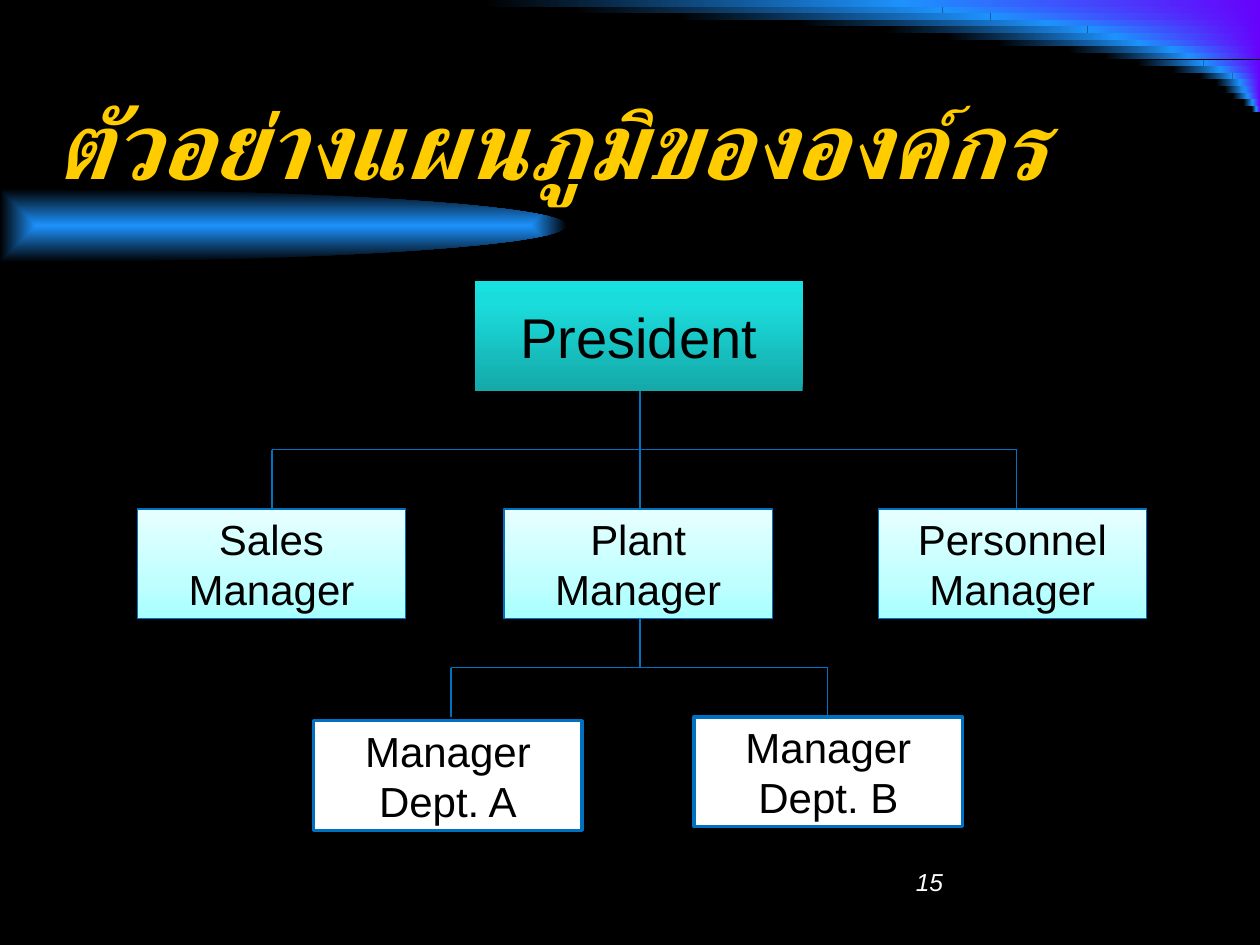
from math import cos, pi, sin

from lxml import etree
from pptx import Presentation
from pptx.dml.color import RGBColor
from pptx.enum.shapes import MSO_CONNECTOR, MSO_SHAPE
from pptx.enum.text import MSO_ANCHOR, PP_ALIGN
from pptx.oxml.ns import qn
from pptx.util import Inches, Pt

STRAIGHT = MSO_CONNECTOR.STRAIGHT
RECTANGLE = MSO_SHAPE.RECTANGLE
MIDDLE = MSO_ANCHOR.MIDDLE
CENTER = PP_ALIGN.CENTER
LEFT = PP_ALIGN.LEFT

BLACK = RGBColor(0x00, 0x00, 0x00)
WHITE = RGBColor(0xFF, 0xFF, 0xFF)
GOLD = RGBColor(0xFF, 0xCC, 0x00)
BLUE = RGBColor(0x00, 0x70, 0xC0)
BRIGHT_BLUE = RGBColor(0x1D, 0x92, 0xFD)
PURPLE = RGBColor(0x67, 0x02, 0xFC)

TEAL_STOPS = [
    (0, RGBColor(0x15, 0xA9, 0xA9)),
    (80, RGBColor(0x1B, 0xDC, 0xDC)),
    (100, RGBColor(0x18, 0xE1, 0xE1)),
]
ICE_STOPS = [
    (0, RGBColor(0xA7, 0xFF, 0xFF)),
    (35, RGBColor(0xC1, 0xFF, 0xFF)),
    (100, RGBColor(0xE7, 0xFF, 0xFF)),
]

SLIDE_WIDTH = 10
STRIPE_HEIGHT = 0.0525
STRIPE_MIDDLES = [7.16, 7.48, 7.86, 8.31, 8.63, 8.85, 9.04, 9.3, 9.43,
                  9.55, 9.68, 9.78, 9.84, 9.87, 9.9, 9.94, 9.97]
FADE_RATIO = 2.17

BOX_WIDTH, BOX_HEIGHT = 2.13, 0.87
MANAGER_TOP = 4.04
MANAGERS = [(1.09, "Sales"), (4, "Plant"), (6.97, "Personnel")]
DEPARTMENTS = [(5.51, 5.69, "Dept. B"), (2.49, 5.72, "Dept. A")]
CENTER_X = 5.08


def set_gradient(shape, stops, angle=0, from_center=False):
    shape.fill.gradient()
    gradient = shape._element.spPr.find(qn("a:gradFill"))
    for child in list(gradient):
        gradient.remove(child)
    stop_list = etree.SubElement(gradient, qn("a:gsLst"))
    for position, color in stops:
        stop = etree.SubElement(stop_list, qn("a:gs"), pos=str(position * 1000))
        etree.SubElement(stop, qn("a:srgbClr"), val=str(color))
    if from_center:
        focus = etree.SubElement(gradient, qn("a:path"), path="shape")
        etree.SubElement(focus, qn("a:fillToRect"),
                         {side: "50000" for side in "ltrb"})
    else:
        etree.SubElement(gradient, qn("a:lin"), ang=str(angle * 60000), scaled="0")


def add_rectangle(slide, left, top, width, height):
    shape = slide.shapes.add_shape(
        RECTANGLE, Inches(left), Inches(top), Inches(width), Inches(height))
    shape.shadow.inherit = False
    shape.line.fill.background()
    return shape


def add_corner_stripes(slide):
    for row, middle in enumerate(STRIPE_MIDDLES):
        top = row * STRIPE_HEIGHT
        left = SLIDE_WIDTH - (SLIDE_WIDTH - middle) * FADE_RATIO
        bright = add_rectangle(slide, middle, top, SLIDE_WIDTH - middle, STRIPE_HEIGHT)
        set_gradient(bright, [(0, BRIGHT_BLUE), (100, PURPLE)])
        fade = add_rectangle(slide, left, top, middle - left, STRIPE_HEIGHT)
        set_gradient(fade, [(0, BLACK), (100, BRIGHT_BLUE)])


def add_half_ellipse(slide, center_y, radius_x, radius_y, steps=60):
    angles = [pi * step / steps - pi / 2 for step in range(steps + 1)]
    points = [(Inches(radius_x * cos(angle)), Inches(center_y + radius_y * sin(angle)))
              for angle in angles]
    builder = slide.shapes.build_freeform(*points[0])
    builder.add_line_segments(points[1:], close=True)
    shape = builder.convert_to_shape()
    shape.shadow.inherit = False
    shape.line.fill.background()
    set_gradient(shape, [(0, BRIGHT_BLUE), (100, BLACK)], from_center=True)


def format_paragraph(paragraph, size, color, alignment, name="Arial"):
    paragraph.alignment = alignment
    paragraph.font.name = name
    paragraph.font.size = Pt(size)
    paragraph.font.color.rgb = color


def add_title(slide, text):
    title = slide.shapes.title
    title.left, title.top = Inches(0.33), Inches(0.5)
    title.width, title.height = Inches(8.5), Inches(1.25)
    title.text_frame.text = text
    title.text_frame.vertical_anchor = MIDDLE
    paragraph = title.text_frame.paragraphs[0]
    format_paragraph(paragraph, 54, GOLD, LEFT, "Arial Narrow")
    paragraph.font.bold = True
    paragraph.font.italic = True


def add_page_number(slide, text):
    box = slide.shapes.add_textbox(
        Inches(7.17), Inches(6.83), Inches(2.08), Inches(0.5))
    box.text_frame.word_wrap = True
    box.text_frame.text = text
    paragraph = box.text_frame.paragraphs[0]
    format_paragraph(paragraph, 14, WHITE, LEFT)
    paragraph.font.italic = True


def add_box(slide, left, top, text, width=BOX_WIDTH, size=24, stops=None, line_width=0):
    shape = add_rectangle(slide, left, top, width, BOX_HEIGHT)
    if stops:
        set_gradient(shape, stops, angle=270)
    else:
        shape.fill.solid()
        shape.fill.fore_color.rgb = WHITE
    if line_width:
        shape.line.color.rgb = BLUE
        shape.line.width = Pt(line_width)
    frame = shape.text_frame
    frame.word_wrap = False
    frame.vertical_anchor = MIDDLE
    frame.text = text
    for paragraph in frame.paragraphs:
        format_paragraph(paragraph, size, BLACK, CENTER)


def add_line(slide, start_x, start_y, end_x, end_y):
    line = slide.shapes.add_connector(
        STRAIGHT, Inches(start_x), Inches(start_y), Inches(end_x), Inches(end_y))
    line.line.color.rgb = BLUE
    line.line.width = Pt(0.75)
    etree.SubElement(line._element.spPr, qn("a:effectLst"))


def add_branch(slide, left, right, top, bottom):
    add_line(slide, left, top, right, top)
    for x in (left, right):
        add_line(slide, x, top, x, bottom)


def add_organization_chart(slide):
    add_line(slide, CENTER_X, 2.94, CENTER_X, 5.3)
    add_box(slide, 3.77, 2.23, "President", width=2.6, size=32, stops=TEAL_STOPS)
    for left, role in MANAGERS:
        add_box(slide, left, MANAGER_TOP, f"{role}\nManager",
                stops=ICE_STOPS, line_width=0.75)
    for left, top, department in DEPARTMENTS:
        add_box(slide, left, top, f"Manager\n{department}", line_width=2)
    add_branch(slide, 3.58, 6.57, 5.3, 5.69)
    add_branch(slide, 2.16, 8.07, 3.57, MANAGER_TOP)


def main():
    presentation = Presentation()
    presentation.slide_width = Inches(SLIDE_WIDTH)
    presentation.slide_height = Inches(7.5)
    slide = presentation.slides.add_slide(presentation.slide_layouts[5])
    slide.background.fill.solid()
    slide.background.fill.fore_color.rgb = BLACK
    add_corner_stripes(slide)
    add_half_ellipse(slide, 1.79, 4.5, 0.29)
    add_page_number(slide, "15")
    add_title(slide, "ตัวอย่างแผนภูมิขององค์กร")
    title_element = slide.shapes.title._element
    title_element.getparent().append(title_element)
    add_organization_chart(slide)
    presentation.save("out.pptx")


if __name__ == "__main__":
    main()
